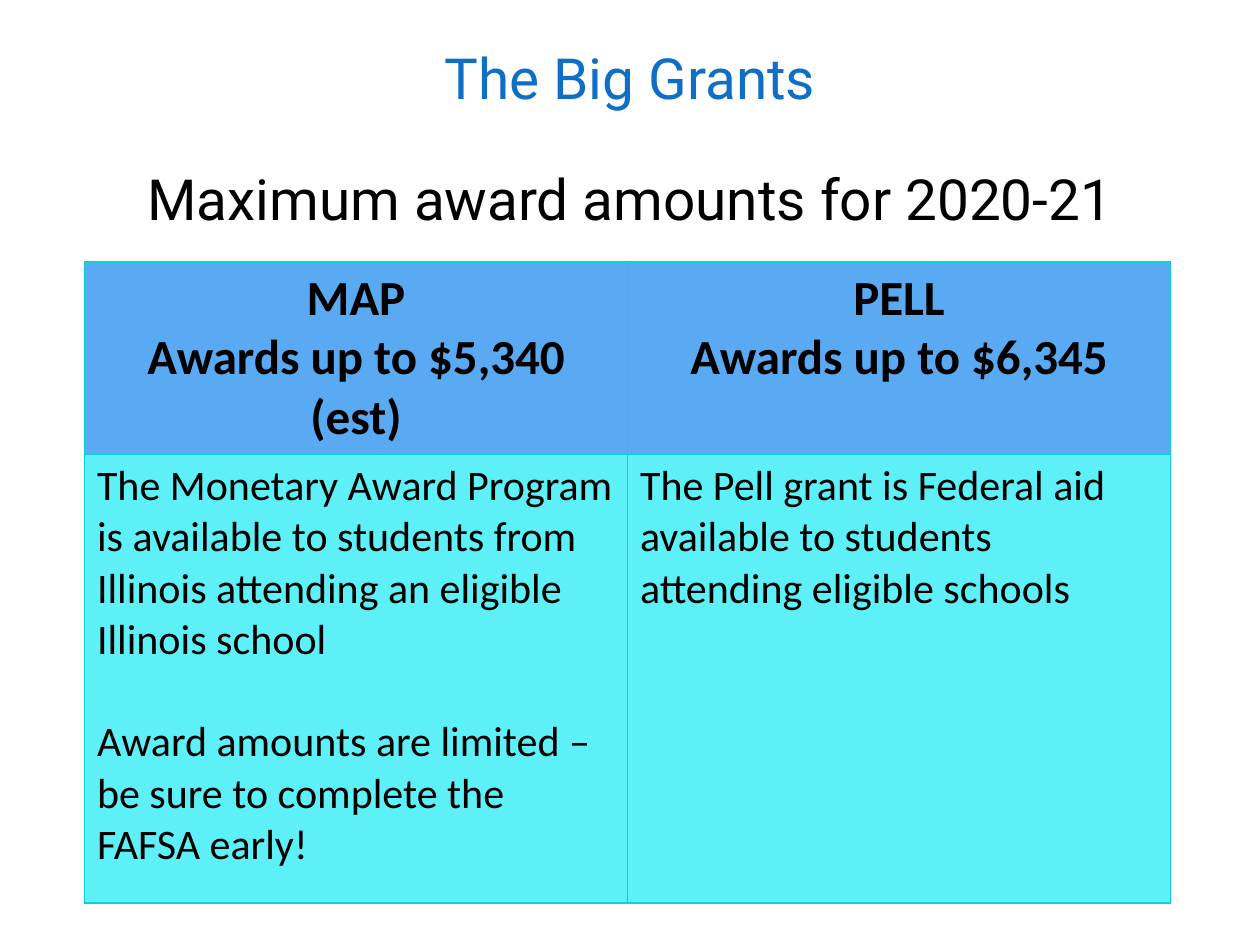
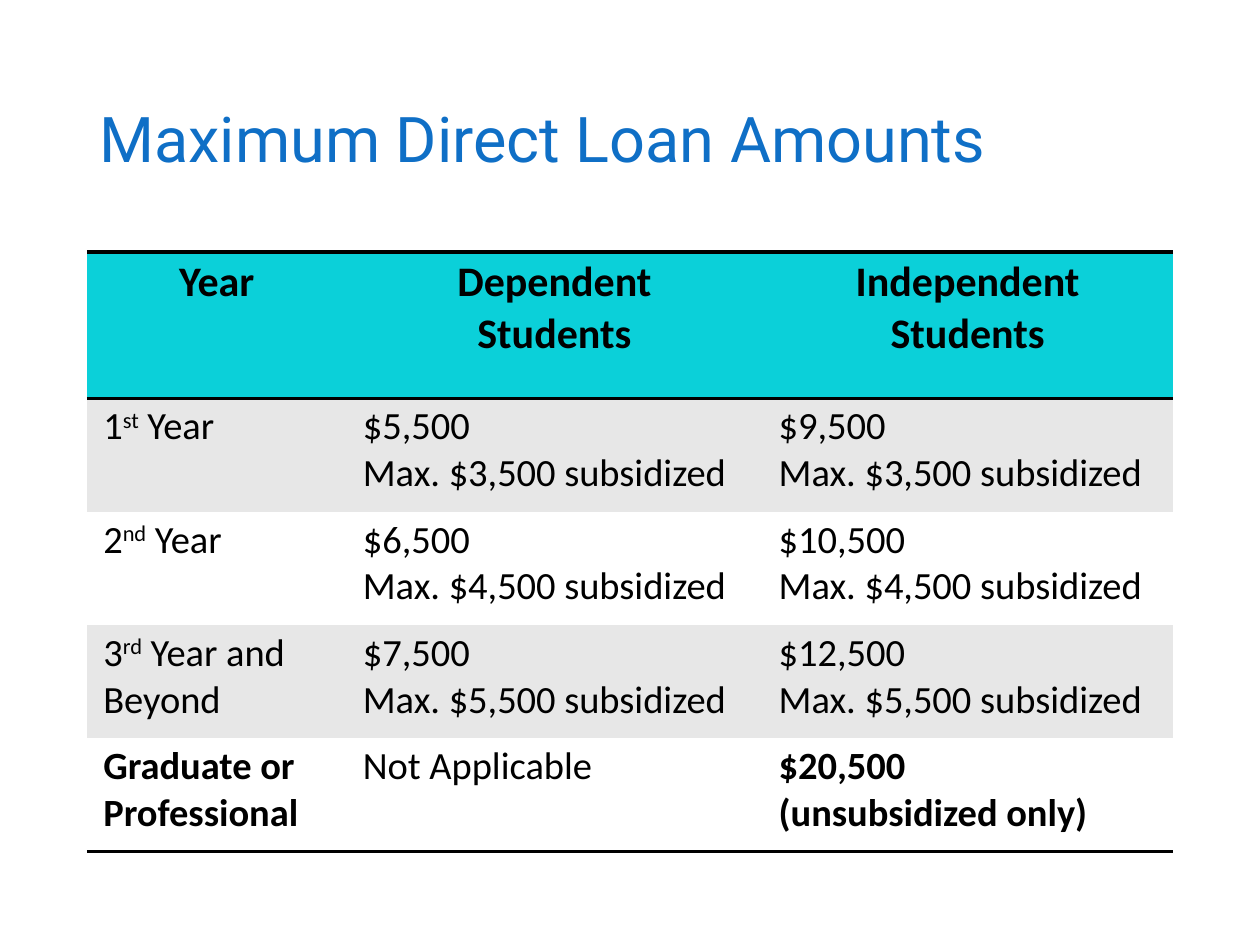
from lxml import etree
from pptx import Presentation
from pptx.dml.color import RGBColor
from pptx.enum.text import MSO_ANCHOR, MSO_AUTO_SIZE, PP_ALIGN
from pptx.oxml.ns import qn
from pptx.util import Inches, Pt

LEFT, CENTER = PP_ALIGN.LEFT, PP_ALIGN.CENTER
MIDDLE = MSO_ANCHOR.MIDDLE
NO_AUTOFIT = MSO_AUTO_SIZE.NONE
TITLE_ONLY = 5

BLACK = RGBColor(0x00, 0x00, 0x00)
WHITE = RGBColor(0xFF, 0xFF, 0xFF)
TITLE_BLUE = RGBColor(0x0F, 0x6F, 0xC6)
GRANT_BLUE = RGBColor(0x59, 0xAA, 0xF2)
GRANT_AQUA = RGBColor(0x5E, 0xF0, 0xF7)
TURQUOISE = RGBColor(0x0B, 0xD0, 0xD9)
BAND_GRAY = RGBColor(0xE7, 0xE7, 0xE7)

GRANT_ROWS = [
    [["MAP", "Awards up to $5,340 (est)"], ["PELL", "Awards up to $6,345"]],
    [["The Monetary Award Program is available to students from Illinois "
      "attending an eligible Illinois school",
      "Award amounts are limited – be sure to complete the FAFSA early!"],
     ["The Pell grant is Federal aid available to students attending eligible schools"]],
]
LOAN_ROWS = [
    [["Year"], ["Dependent", "Students"], ["Independent", "Students"]],
    [["1|st| Year"], ["$5,500", "Max. $3,500 subsidized"], ["$9,500", "Max. $3,500 subsidized"]],
    [["2|nd| Year"], ["$6,500", "Max. $4,500 subsidized"], ["$10,500", "Max. $4,500 subsidized"]],
    [["3|rd| Year and Beyond"], ["$7,500", "Max. $5,500 subsidized"],
     ["$12,500", "Max. $5,500 subsidized"]],
    [["Graduate or Professional"], ["Not Applicable"], ["$20,500", "(unsubsidized only)"]],
]


def add_title_slide(lines, size, alignment):
    slide = presentation.slides.add_slide(presentation.slide_layouts[TITLE_ONLY])
    title = slide.shapes.title
    title.left, title.top = Inches(0.69), Inches(0.4)
    title.width, title.height = Inches(8.62), Inches(1.45)
    frame = title.text_frame
    frame.text = "\n".join(lines)
    frame.word_wrap = True
    frame.auto_size = NO_AUTOFIT
    frame.vertical_anchor = MIDDLE
    for paragraph, color in zip(frame.paragraphs, (TITLE_BLUE, BLACK)):
        paragraph.alignment = alignment
        paragraph.line_spacing = 0.9
        paragraph.font.name = "Roboto"
        paragraph.font.size = Pt(size)
        paragraph.font.color.rgb = color
    return slide


def fill_cell(cell, lines, size, bold, alignment, fill, borders, gap=0):
    properties = cell._tc.get_or_add_tcPr()
    for side, (color, width) in zip("LRTB", borders):
        line = etree.SubElement(properties, qn(f"a:ln{side}"), w=str(Pt(width)))
        if width:
            solid = etree.SubElement(line, qn("a:solidFill"))
            etree.SubElement(solid, qn("a:srgbClr"), val=str(color))
        else:
            etree.SubElement(line, qn("a:noFill"))
    cell.fill.solid()
    cell.fill.fore_color.rgb = fill
    cell.text_frame.text = "\n".join(lines).replace("|", "")
    for index, (paragraph, text) in enumerate(zip(cell.text_frame.paragraphs, lines)):
        paragraph.alignment = alignment
        if index and gap:
            paragraph.space_before = Pt(gap)
        parts = text.split("|")
        paragraph.runs[0].text = parts[0]
        for part in parts[1:]:
            paragraph.add_run().text = part
        for position, run in enumerate(paragraph.runs):
            run.font.name = "Calibri"
            run.font.size = Pt(size)
            run.font.bold = bold
            run.font.color.rgb = BLACK
            if position % 2:
                run._r.get_or_add_rPr().set("baseline", "30000")


presentation = Presentation()
presentation.slide_width, presentation.slide_height = Inches(10), Inches(7.5)

slide = add_title_slide(["The Big Grants", "Maximum award amounts for 2020-21"], 32.4, CENTER)
slide.shapes.title.text_frame.paragraphs[1].space_before = Pt(34)
table = slide.shapes.add_table(
    2, 2, Inches(0.67), Inches(2.08), Inches(8.62), Inches(5.08)).table
grant_styles = [(28, True, CENTER, GRANT_BLUE), (24, False, LEFT, GRANT_AQUA)]
for row, height, texts, style, gap in zip(
        table.rows, (1.52, 3.56), GRANT_ROWS, grant_styles, (0, 29.3)):
    row.height = Inches(height)
    for cell, lines in zip(row.cells, texts):
        fill_cell(cell, lines, *style, [(TURQUOISE, 1)] * 4, gap)

slide = add_title_slide(["Maximum Direct Loan Amounts"], 36, LEFT)
table = slide.shapes.add_table(
    5, 3, Inches(0.69), Inches(2), Inches(8.62), Inches(4.76)).table
for column, width in zip(table.columns, (2.06, 3.3, 3.26)):
    column.width = Inches(width)
ruled_edges = (0, 1, len(LOAN_ROWS))
for row_index, (row, texts) in enumerate(zip(table.rows, LOAN_ROWS)):
    header = row_index == 0
    row.height = Inches(1.16 if header else 0.9)
    fill = TURQUOISE if header else BAND_GRAY if row_index % 2 else WHITE
    edges = [(BLACK, 2 if edge in ruled_edges else 0) for edge in (row_index, row_index + 1)]
    borders = [(BLACK, 0)] * 2 + edges
    for column_index, (cell, lines) in enumerate(zip(row.cells, texts)):
        cell.margin_left = cell.margin_right = Inches(0.13)
        cell.margin_top = cell.margin_bottom = Inches(0.04)
        bold = header or (row_index == len(LOAN_ROWS) - 1 and column_index != 1)
        fill_cell(cell, lines, 24 if header else 22, bold,
                  CENTER if header else LEFT, fill, borders)

presentation.save("out.pptx")
